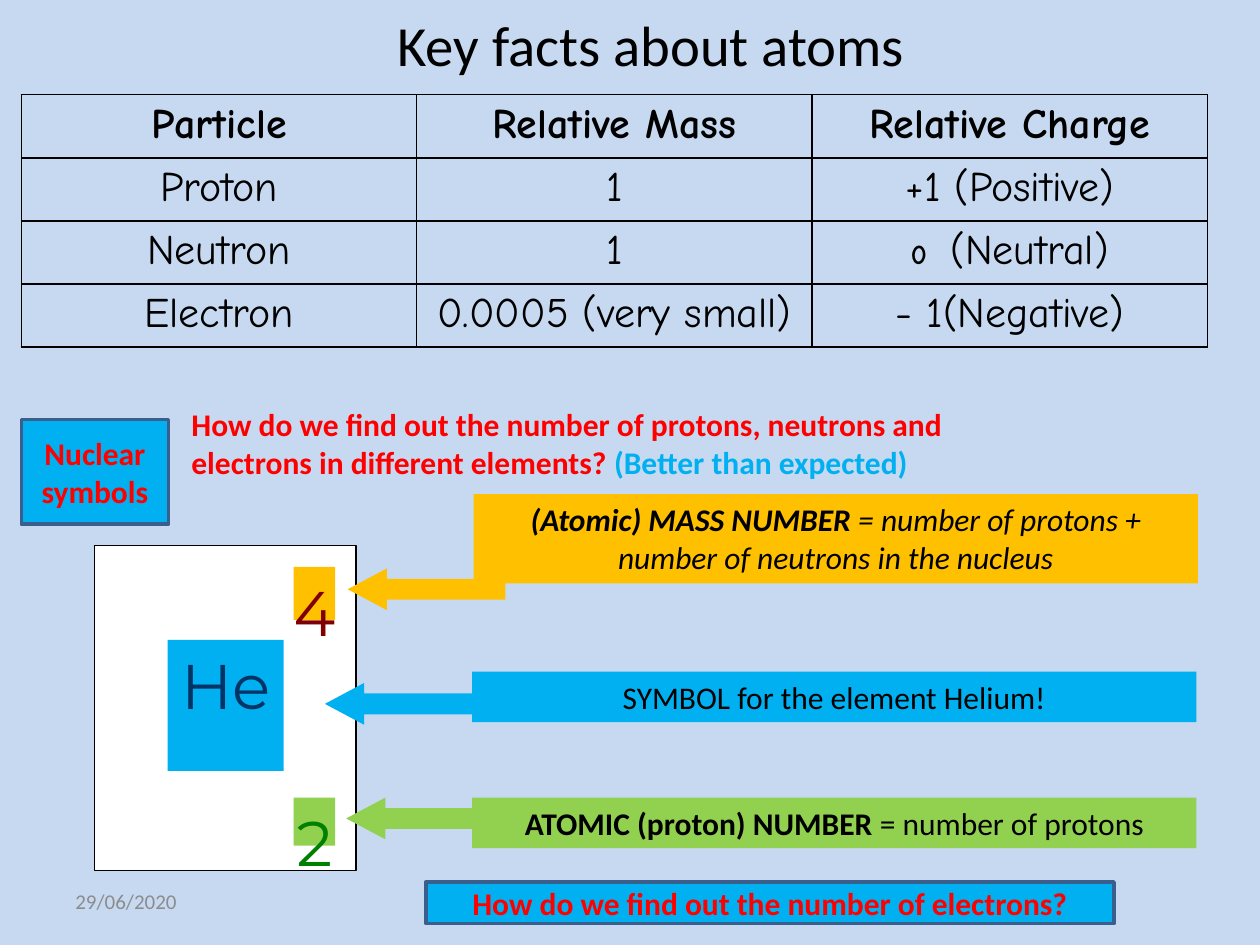
import pptx
import pptx.dml.color
import pptx.enum.shapes
import pptx.enum.text
import pptx.oxml
import pptx.oxml.ns
import pptx.util

Cm = pptx.util.Cm
Pt = pptx.util.Pt
SHAPE = pptx.enum.shapes.MSO_SHAPE
ANCHOR = pptx.enum.text.MSO_ANCHOR
ALIGN = pptx.enum.text.PP_ALIGN

SKY, BLUE, AMBER, GREEN = "C6D9F1", "00B0F0", "FFC000", "92D050"
BLACK, WHITE, RED, NAVY_EDGE = "000000", "FFFFFF", "FF0000", "3A5F8C"

BODY = {"name": "Calibri", "size": Pt(18), "color": BLACK}
BOLD = {**BODY, "bold": True}
RED_BOLD = {**BOLD, "color": RED}
CELL = {"name": "Comic Neue", "size": Pt(24), "color": BLACK, "bold": False}
CELL_HEAD = {**CELL, "bold": True}
SYMBOL = {"name": "Montserrat", "size": Pt(36)}

TITLE = [("Key facts about atoms", {**BODY, "size": Pt(32.4)})]
DATE = [("29/06/2020", {**BODY, "size": Pt(12), "color": "8C8C8C"})]
QUESTION = [
    ("How do we find out the number of protons, neutrons and electrons in different elements? ", RED_BOLD),
    ("(Better than expected)", {**BOLD, "color": BLUE}),
]
PARTICLES = [
    ["Particle", "Relative Mass", "Relative Charge"],
    ["Proton", "1", "+1 (Positive)"],
    ["Neutron", "1", [("0 ", {**CELL_HEAD, "size": Pt(16)}), (" (Neutral)", CELL)]],
    ["Electron", "0.0005 (very small)", "- 1(Negative)"],
]
NUCLIDE = [
    ("He", (3.38, 12.9, 2.34, 2.64), BLUE, "003366"),
    ("2", (5.92, 16.08, 0.84, 0.97), GREEN, "008000"),
    ("4", (5.92, 11.43, 0.84, 1.07), AMBER, "800000"),
]
LABELS = [
    (AMBER, (9.55, 9.96, 14.6, 1.8), (7.01, 11.46), [
        ("(Atomic) MASS NUMBER ", {**BOLD, "italic": True}),
        ("= number of protons + number of neutrons in the nucleus", {**BODY, "italic": True}),
    ]),
    (BLUE, (9.52, 13.54, 14.6, 1.02), (6.55, 13.77), [("SYMBOL for the element Helium!", BODY)]),
    (GREEN, (9.52, 16.08, 14.6, 1.02), (6.98, 16.08), [
        ("ATOMIC (proton) NUMBER ", BOLD),
        ("= number of protons", BODY),
    ]),
]
PROMPTS = [
    ("Nuclear symbols", (0.43, 8.46, 2.97, 2.11)),
    ("How do we find out the number of electrons?", (8.59, 17.78, 13.87, 0.84)),
]
COLUMN_WIDTH, ROW_HEIGHT = 7.97, 1.24
ARROW_SIZE = (3.18, 0.84)


def rgb(code):
    return pptx.dml.color.RGBColor.from_string(code)


def paint(fill, code):
    fill.solid()
    fill.fore_color.rgb = rgb(code)


def place(box):
    return [Cm(length) for length in box]


def write(frame, runs, align=ALIGN.CENTER, **frame_format):
    for attribute, value in {"word_wrap": True, **frame_format}.items():
        setattr(frame, attribute, value)
    paragraph = frame.paragraphs[0]
    paragraph.alignment = align
    for words, font_format in runs:
        run = paragraph.add_run()
        run.text = words
        for attribute, value in font_format.items():
            if attribute == "color":
                run.font.color.rgb = rgb(value)
            else:
                setattr(run.font, attribute, value)


def add_block(slide, kind, box, fill, edge=None, edge_width=0.75):
    block = slide.shapes.add_shape(kind, *place(box))
    block.shadow.inherit = False
    paint(block.fill, fill)
    if edge:
        block.line.color.rgb = rgb(edge)
        block.line.width = Pt(edge_width)
    else:
        block.line.fill.background()
    return block


def add_borders(cell):
    properties = cell._tc.get_or_add_tcPr()
    for index, side in enumerate(("lnL", "lnR", "lnT", "lnB")):
        properties.insert(index, pptx.oxml.parse_xml(
            f'<a:{side} {pptx.oxml.ns.nsdecls("a")} w="12700">'
            f'<a:solidFill><a:srgbClr val="{BLACK}"/></a:solidFill></a:{side}>'))


def add_particles(slide):
    rows, columns = len(PARTICLES), len(PARTICLES[0])
    box = (0.43, 1.91, columns * COLUMN_WIDTH, rows * ROW_HEIGHT)
    table = slide.shapes.add_table(rows, columns, *place(box)).table
    for column in table.columns:
        column.width = Cm(COLUMN_WIDTH)
    for row_index, values in enumerate(PARTICLES):
        table.rows[row_index].height = Cm(ROW_HEIGHT)
        for column_index, value in enumerate(values):
            cell = table.cell(row_index, column_index)
            paint(cell.fill, SKY)
            add_borders(cell)
            style = CELL_HEAD if row_index == 0 else CELL
            write(cell.text_frame, [(value, style)] if isinstance(value, str) else value)


def main():
    deck = pptx.Presentation()
    deck.slide_width, deck.slide_height = Cm(25.4), Cm(19.05)
    slide = deck.slides.add_slide(deck.slide_layouts[5])
    paint(slide.background.fill, SKY)

    date = slide.shapes.add_textbox(*place((1.27, 17.65, 5.92, 1.02)))
    write(date.text_frame, DATE, ALIGN.LEFT, vertical_anchor=ANCHOR.MIDDLE)

    title = slide.shapes.title
    title.left, title.top, title.width, title.height = place((2.54, 0.2, 21.16, 1.35))
    write(title.text_frame, TITLE, vertical_anchor=ANCHOR.MIDDLE)

    add_particles(slide)

    add_block(slide, SHAPE.RECTANGLE, (1.9, 11, 5.28, 6.55), WHITE, BLACK)
    for symbol, box, fill, color in NUCLIDE:
        tile = add_block(slide, SHAPE.RECTANGLE, box, fill)
        write(tile.text_frame, [(symbol, {**SYMBOL, "color": color})],
              word_wrap=False, vertical_anchor=ANCHOR.TOP)

    for fill, box, arrow_corner, runs in LABELS:
        label = add_block(slide, SHAPE.RECTANGLE, box, fill)
        write(label.text_frame, runs, vertical_anchor=ANCHOR.TOP)
        arrow = add_block(slide, SHAPE.LEFT_ARROW, arrow_corner + ARROW_SIZE, fill)
        arrow.adjustments[1] = 0.94

    question = slide.shapes.add_textbox(*place((3.61, 8.05, 18.21, 1.8)))
    write(question.text_frame, QUESTION, ALIGN.LEFT)

    for words, box in PROMPTS:
        prompt = add_block(slide, SHAPE.RECTANGLE, box, BLUE, NAVY_EDGE, 2)
        write(prompt.text_frame, [(words, RED_BOLD)], vertical_anchor=ANCHOR.MIDDLE)

    deck.save("out.pptx")


if __name__ == "__main__":
    main()
